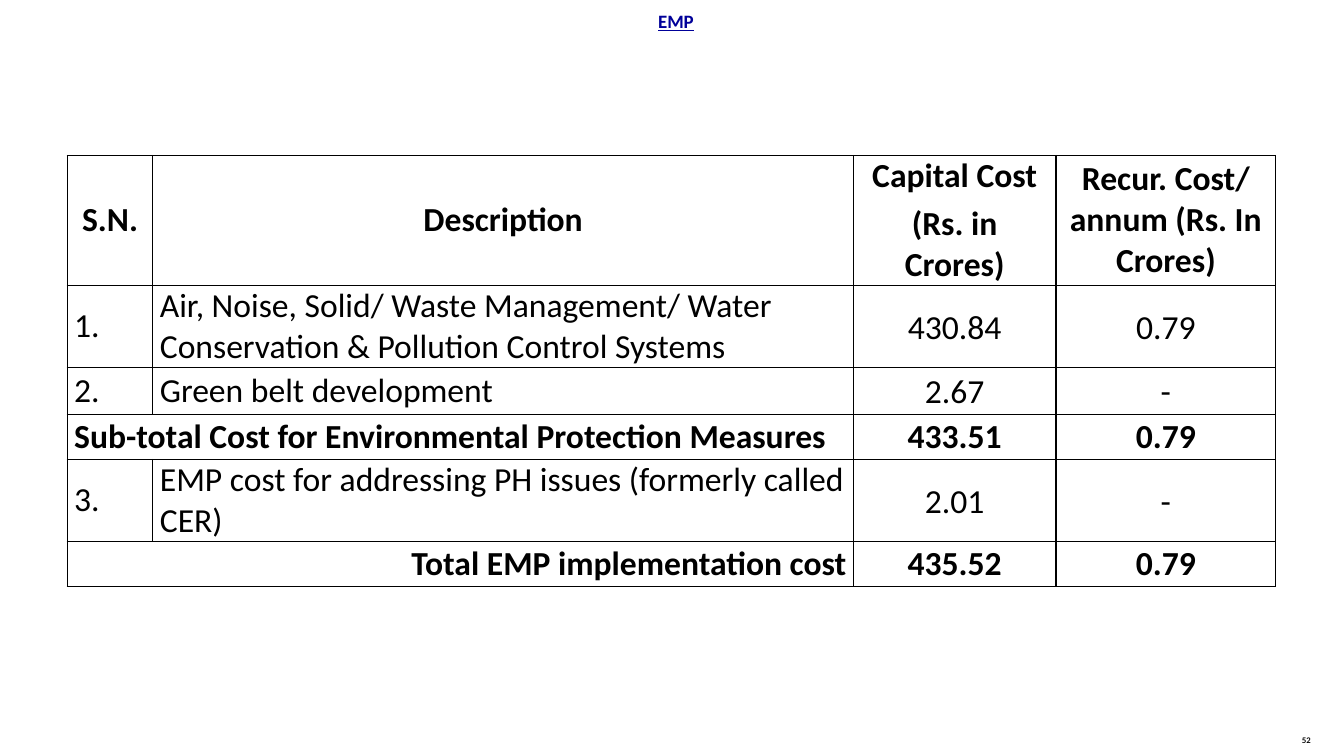
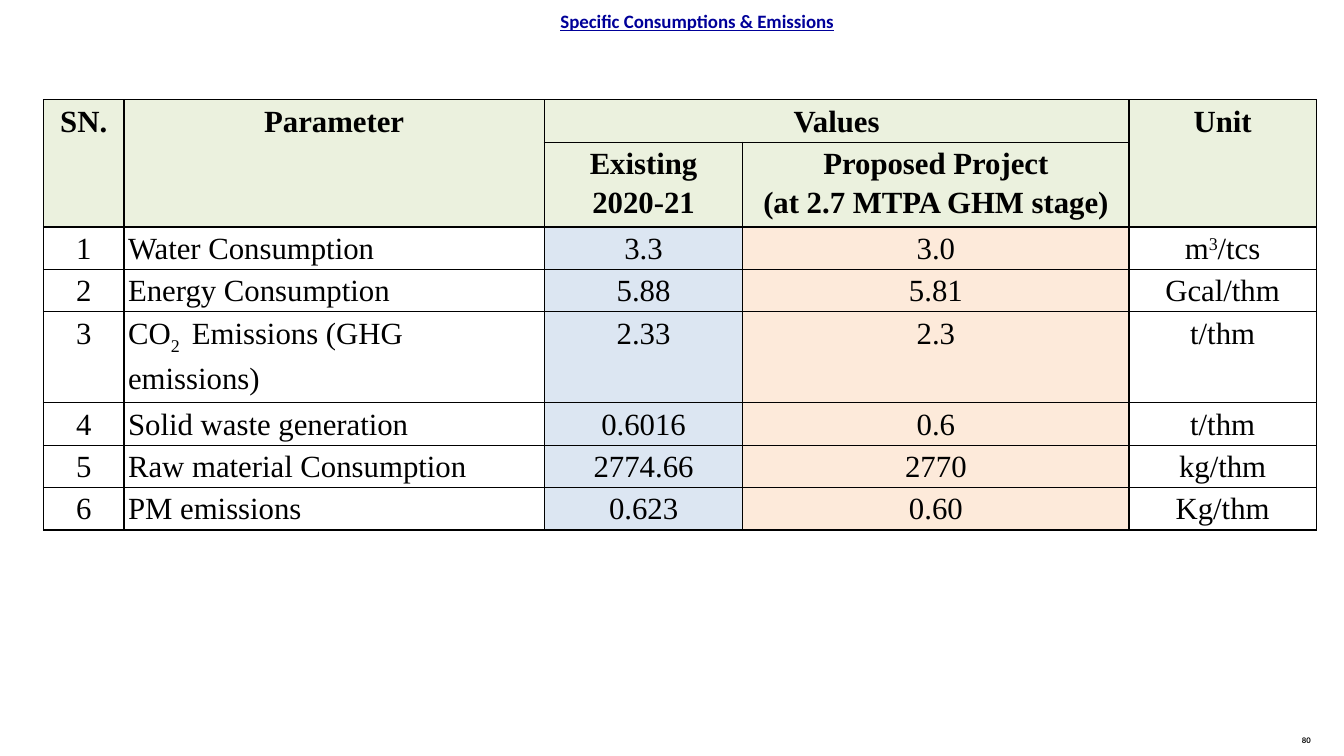
import dataclasses

import pptx
import pptx.dml.color
import pptx.enum.text
import pptx.util
from lxml import etree

Pt = pptx.util.Pt
RGB = pptx.dml.color.RGBColor.from_string
ALIGN = pptx.enum.text.PP_ALIGN
ANCHOR = pptx.enum.text.MSO_ANCHOR
DRAWING = "{http://schemas.openxmlformats.org/drawingml/2006/main}"


@dataclasses.dataclass(frozen=True)
class Theme:
    ink: str = "000000"
    title: str = "000099"
    header_fill: str = "EBF1DE"
    existing_fill: str = "DCE6F2"
    proposed_fill: str = "FDEADA"
    title_font: str = "Calibri"
    number_font: str = "Lato"
    cost_font: str = "Calibri"
    emission_font: str = "Times New Roman"
    title_size: float = 13.5
    number_size: float = 5.5
    cost_size: float = 24
    emission_size: float = 22


theme = Theme()
deck = pptx.Presentation()
deck.slide_width, deck.slide_height = Pt(960), Pt(540)


def start_page(title, number, title_left, title_width, title_indent, left, top, columns, rows):
    """Add a page with its title, page number and an empty table; return the table."""
    page = deck.slides.add_slide(deck.slide_layouts[5])
    number_box = page.shapes.add_textbox(Pt(910.8), Pt(521.3), Pt(44.6), Pt(18.7))
    heading = page.shapes.title
    heading.left, heading.top = Pt(title_left), Pt(0)
    heading.width, heading.height = Pt(title_width), Pt(36)
    for box, text, font, size, color, inset, indent in (
        (heading, title, theme.title_font, theme.title_size, theme.title, 7, title_indent),
        (number_box, number, theme.number_font, theme.number_size, theme.ink, 4.5, 0),
    ):
        frame = box.text_frame
        frame.text = text
        frame.word_wrap = True
        frame.auto_size = pptx.enum.text.MSO_AUTO_SIZE.NONE
        frame.vertical_anchor = ANCHOR.TOP
        frame.margin_left, frame.margin_right = Pt(indent), Pt(0)
        frame.margin_top, frame.margin_bottom = Pt(inset), Pt(0)
        para = frame.paragraphs[0]
        para.alignment = ALIGN.CENTER
        para.font.name, para.font.size, para.font.bold = font, Pt(size), True
        para.font.underline = box is heading
        para.font.color.rgb = RGB(color)

    table = page.shapes.add_table(
        len(rows), len(columns), Pt(left), Pt(top), Pt(sum(columns)), Pt(sum(rows))
    ).table
    table.first_row = table.horz_banding = False
    for column, width in zip(table.columns, columns):
        column.width = Pt(width)
    for row, height in zip(table.rows, rows):
        row.height = Pt(height)
    return table


def style_cell(cell, lines, font, size, bold, align, anchor, inset, spacing, gap=0, fill=None):
    """Write lines, each a list of (text, baseline) spans, and format the cell."""
    cell.margin_left = cell.margin_right = Pt(inset)
    cell.margin_top = cell.margin_bottom = Pt(0)
    cell.vertical_anchor = anchor
    if fill:
        cell.fill.solid()
        cell.fill.fore_color.rgb = RGB(fill)
    else:
        cell.fill.background()
    properties = cell._tc.get_or_add_tcPr()
    for position, side in enumerate(("lnL", "lnR", "lnT", "lnB")):
        border = etree.Element(DRAWING + side, w=str(Pt(1)))
        solid = etree.SubElement(border, DRAWING + "solidFill")
        etree.SubElement(solid, DRAWING + "srgbClr", val=theme.ink)
        properties.insert(position, border)

    frame = cell.text_frame
    for index, spans in enumerate(lines):
        para = frame.add_paragraph() if index else frame.paragraphs[0]
        para.alignment = align
        para.line_spacing = spacing
        if index and gap:
            para.space_before = Pt(gap)
        para.font.name, para.font.size, para.font.bold = font, Pt(size), bold
        para.font.color.rgb = RGB(theme.ink)
        for text, baseline in spans:
            span = para.add_run()
            span.text = text
            if baseline:
                span._r.get_or_add_rPr().set("baseline", str(baseline))


# Environmental management costs
cost_rows = [
    ["S.N.", "Description", "Capital Cost\n(Rs. in Crores)", "Recur. Cost/ annum (Rs. In Crores)"],
    ["1.", "Air, Noise, Solid/ Waste Management/ Water Conservation & Pollution Control Systems",
     "430.84", "0.79"],
    ["2.", "Green belt development", "2.67", "-"],
    ["Sub-total Cost for Environmental Protection Measures", "", "433.51", "0.79"],
    ["3.", "EMP cost for addressing PH issues (formerly called CER)", "2.01", "-"],
    ["Total EMP implementation cost", "", "435.52", "0.79"],
]
HEADER_ROW, SUBTOTAL_ROW, TOTAL_ROW = 0, 3, 5
costs = start_page(
    "EMP", "52", 49, 867.6, 0, 48, 111,
    columns=[61.2, 500.4, 144.7, 157], rows=[91.5, 57.8, 33.6, 32.2, 57.8, 32.2],
)
for row in (SUBTOTAL_ROW, TOTAL_ROW):
    costs.cell(row, 0).merge(costs.cell(row, 1))
for row, texts in enumerate(cost_rows):
    bold = row in (HEADER_ROW, SUBTOTAL_ROW, TOTAL_ROW)
    for column, text in enumerate(texts):
        if row == HEADER_ROW or column > 1:
            align = ALIGN.CENTER
        else:
            align = ALIGN.RIGHT if row == TOTAL_ROW else ALIGN.LEFT
        style_cell(
            costs.cell(row, column), [[(line, 0)] for line in text.split("\n") if line],
            theme.cost_font, theme.cost_size, bold, align, ANCHOR.MIDDLE, inset=5,
            spacing=1.07 if column > 1 and not bold else 1.0, gap=5,
        )

# Specific consumptions and emissions
emission_rows = [
    ["SN.", "Parameter", "Values", "", "Unit"],
    ["", "", "Existing\n2020-21", "Proposed Project\n(at 2.7 MTPA GHM stage)", ""],
    ["1", "Water Consumption", "3.3", "3.0", [("m", 0), ("3", 30000), ("/tcs", 0)]],
    ["2", "Energy Consumption", "5.88", "5.81", "Gcal/thm"],
    ["3", [("CO", 0), ("2 ", -25000), (" Emissions (GHG emissions)", 0)], "2.33", "2.3", "t/thm"],
    ["4", "Solid waste generation", "0.6016", "0.6", "t/thm"],
    ["5", "Raw material Consumption", "2774.66", "2770", "kg/thm"],
    ["6", "PM emissions", "0.623", "0.60", "Kg/thm"],
]
column_fills = [None, None, theme.existing_fill, theme.proposed_fill, None]
emissions = start_page(
    "Specific Consumptions & Emissions", "80", 120, 720, 36, 31, 71.3,
    columns=[57.6, 300.2, 141.8, 275.8, 133.9],
    rows=[30.3, 60.6, 30.3, 30.3, 65, 30.3, 30.3, 30.3],
)
for column in (0, 1, 4):
    emissions.cell(0, column).merge(emissions.cell(1, column))
emissions.cell(0, 2).merge(emissions.cell(0, 3))
for row, contents in enumerate(emission_rows):
    header = row < 2
    for column, content in enumerate(contents):
        if isinstance(content, str):
            lines = [[(line, 0)] for line in content.split("\n") if line]
        else:
            lines = [content]
        style_cell(
            emissions.cell(row, column), lines, theme.emission_font, theme.emission_size, header,
            ALIGN.LEFT if column == 1 and not header else ALIGN.CENTER, ANCHOR.TOP,
            inset=10.8 if column == 2 else 2.9, spacing=1.15,
            fill=theme.header_fill if header else column_fills[column],
        )

deck.save("out.pptx")
